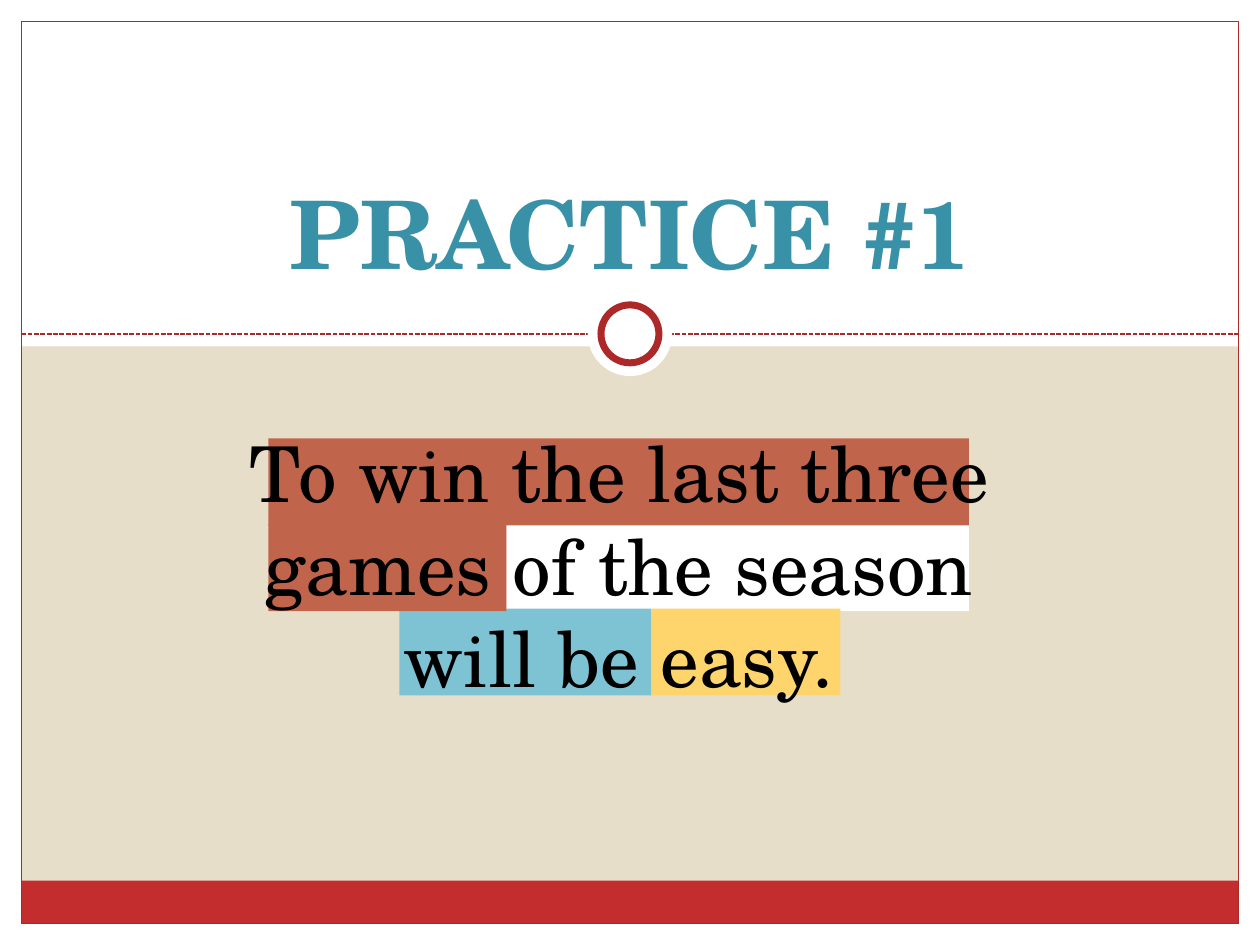
from lxml import etree
from pptx import Presentation
from pptx.dml.color import RGBColor
from pptx.enum.dml import MSO_LINE
from pptx.enum.shapes import MSO_CONNECTOR, MSO_SHAPE
from pptx.enum.text import MSO_ANCHOR, PP_ALIGN
from pptx.oxml.ns import qn
from pptx.util import Inches, Pt

RECT, OVAL = MSO_SHAPE.RECTANGLE, MSO_SHAPE.OVAL
STRAIGHT, DASH = MSO_CONNECTOR.STRAIGHT, MSO_LINE.SQUARE_DOT
TOP, BOTTOM, CENTER = MSO_ANCHOR.TOP, MSO_ANCHOR.BOTTOM, PP_ALIGN.CENTER

THEME = {
    "font": "TeX Gyre Schola", "title_size": 54, "sentence_size": 44,
    "sand": "E7DEC9", "white": "FFFFFF", "red": "C32D2E", "border": "AC2829",
    "title": "3891A7", "ink": "000000",
    "blue": "7EC3D4", "rust": "C0654C", "yellow": "FED46C",
}

TITLE = ["PRACTICE #1"]
SENTENCE = ["To win the last three games of the season", "will be easy."]

WIDTH, HEIGHT, MARGIN = 10, 7.5, 0.17
HEADER_HEIGHT, RULE_Y, FOOTER_HEIGHT = 2.75, 2.65, 0.34
INNER_WIDTH, INNER_HEIGHT = WIDTH - 2 * MARGIN, HEIGHT - 2 * MARGIN
RIGHT, FLOOR = WIDTH - MARGIN, HEIGHT - MARGIN

MARGINS = [
    (0, FLOOR, WIDTH, MARGIN),
    (RIGHT, 0, MARGIN, HEIGHT),
    (0, 0, MARGIN, HEIGHT),
    (0, 0, WIDTH, HEADER_HEIGHT),
]
ROW_TOPS, HIGHLIGHT_HEIGHT = (3.48, 4.16, 4.83), 0.69
HIGHLIGHTS = [
    ("white", 1, 4.02, 7.69),
    ("blue", 2, 3.17, 5.17),
    ("rust", 0, 2.13, 7.69),
    ("rust", 1, 2.13, 4.02),
    ("yellow", 2, 5.17, 6.67),
]


def color(name):
    return RGBColor.from_string(THEME[name])


def add_block(slide, kind, box, fill=None, border_width=None):
    block = slide.shapes.add_shape(kind, *map(Inches, box))
    block.shadow.inherit = False
    if fill:
        block.fill.solid()
        block.fill.fore_color.rgb = color(fill)
    else:
        block.fill.background()
    if border_width:
        block.line.color.rgb = color("border")
        block.line.width = Pt(border_width)
    else:
        block.line.fill.background()


def add_medallion(slide, diameter, border_width=None):
    box = (WIDTH / 2 - diameter / 2, RULE_Y - diameter / 2, diameter, diameter)
    add_block(slide, OVAL, box, "white", border_width)


def add_rule(slide):
    rule = slide.shapes.add_connector(
        STRAIGHT, Inches(MARGIN), Inches(RULE_Y), Inches(RIGHT), Inches(RULE_Y))
    rule.line.color.rgb = color("border")
    rule.line.width = Pt(0.9)
    rule.line.dash_style = DASH
    etree.SubElement(rule._element.spPr, qn("a:effectLst"))


def add_text(slide, box, lines, size, ink, anchor, bold=False):
    frame = slide.shapes.add_textbox(*map(Inches, box)).text_frame
    frame.word_wrap = True
    frame.vertical_anchor = anchor
    frame.text = "\n".join(lines)
    for paragraph in frame.paragraphs:
        paragraph.alignment = CENTER
        paragraph.font.name = THEME["font"]
        paragraph.font.size = Pt(THEME[size])
        paragraph.font.bold = bold
        paragraph.font.color.rgb = color(ink)


def main():
    deck = Presentation()
    deck.slide_width, deck.slide_height = Inches(WIDTH), Inches(HEIGHT)
    slide = deck.slides.add_slide(deck.slide_layouts[6])
    slide.background.fill.solid()
    slide.background.fill.fore_color.rgb = color("sand")

    for box in MARGINS:
        add_block(slide, RECT, box, "white")
    footer = (MARGIN, FLOOR - FOOTER_HEIGHT, INNER_WIDTH, FOOTER_HEIGHT)
    add_block(slide, RECT, footer, "red")
    add_rule(slide)
    add_block(slide, RECT, (MARGIN, MARGIN, INNER_WIDTH, INNER_HEIGHT), border_width=0.75)
    add_medallion(slide, 0.67)
    add_medallion(slide, 0.46, border_width=4)

    add_text(slide, (0.75, 0.42, 8.5, 1.92), TITLE, "title_size", "title", BOTTOM, bold=True)
    for fill, row, left, right in HIGHLIGHTS:
        box = (left, ROW_TOPS[row], right - left, HIGHLIGHT_HEIGHT)
        add_block(slide, RECT, box, fill)
    add_text(slide, (1.25, 3.33, 7.33, 2.32), SENTENCE, "sentence_size", "ink", TOP)

    deck.save("out.pptx")


if __name__ == "__main__":
    main()
